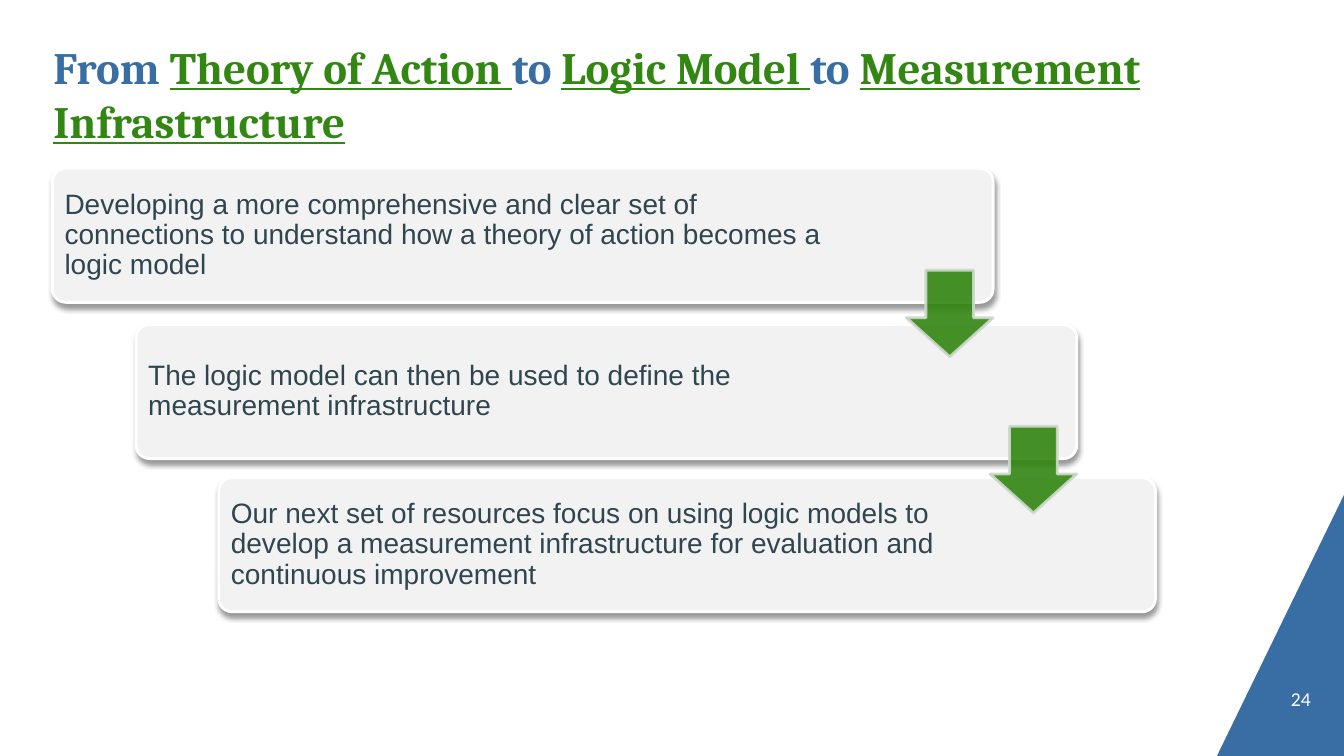
"""Build a slide of three stepped cards joined by down arrows."""
from dataclasses import dataclass
from typing import Any

from lxml.etree import SubElement
from pptx import Presentation
from pptx.dml.color import RGBColor as RGB
from pptx.enum.shapes import MSO_SHAPE as Kind
from pptx.enum.text import MSO_ANCHOR as Anchor, MSO_AUTO_SIZE as Fit, PP_ALIGN as Align
from pptx.oxml.ns import qn
from pptx.util import Inches, Pt


@dataclass(frozen=True)
class Theme:
    blue: str = "386EA3"
    green: str = "328612"
    ink: str = "2F4550"
    card: str = "F2F2F2"
    edge: str = "CED9CC"
    white: str = "FFFFFF"
    black: str = "000000"
    head: int = 32
    body: int = 20
    small: int = 14


@dataclass(frozen=True)
class Box:
    x: float
    y: float
    w: float
    h: float

    def place(self) -> list[int]:
        return [Inches(v) for v in (self.x, self.y, self.w, self.h)]


@dataclass(frozen=True)
class Card:
    box: Box
    wide: float
    text: str


THEME = Theme()
CARDS = [
    Card(Box(0.52, 1.67, 9.33, 1.33), 7.89,
         "Developing a more comprehensive and clear set of connections "
         "to understand how a theory of action becomes a logic model"),
    Card(Box(1.35, 3.22, 9.33, 1.33), 7.56,
         "The logic model can then be used to define the measurement infrastructure"),
    Card(Box(2.17, 4.74, 9.29, 1.33), 7.53,
         "Our next set of resources focus on using logic models to develop a "
         "measurement infrastructure for evaluation and continuous improvement"),
]
TITLE = [
    ("From ", False), ("Theory of Action ", True), ("to ", False),
    ("Logic Model ", True), ("to ", False), ("Measurement Infrastructure", True),
]


def apply(item: Any, form: dict[str, Any]) -> None:
    for name, value in form.items():
        setattr(item, name, value)


def style(font: Any, face: str, size: int, tint: str, **more: Any) -> None:
    apply(font, {"name": face, "size": Pt(size), **more})
    font.color.rgb = RGB.from_string(tint)


def frame(shape: Any, inset: float, anchor: Any) -> Any:
    pad = Inches(inset)
    apply(shape.text_frame, {
        "word_wrap": True, "auto_size": Fit.NONE, "vertical_anchor": anchor,
        "margin_left": pad, "margin_top": pad, "margin_right": pad, "margin_bottom": pad,
    })
    return shape.text_frame.paragraphs[0]


def paint(shape: Any, fill: str, line: str | None = None) -> None:
    shape.shadow.inherit = False
    shape.fill.solid()
    shape.fill.fore_color.rgb = RGB.from_string(fill)
    if line:
        shape.line.color.rgb = RGB.from_string(line)
        shape.line.width = Pt(2)
    else:
        shape.line.fill.background()


def fade(tint: Any, part: int) -> None:
    SubElement(tint, qn("a:alpha"), val=str(part * 1000))


def shade(shape: Any) -> None:
    glow = SubElement(shape.element.spPr.find(qn("a:effectLst")), qn("a:outerShdw"),
                      blurRad=str(Pt(4)), dist=str(Pt(3)), dir="5400000", rotWithShape="0")
    fade(SubElement(glow, qn("a:srgbClr"), val=THEME.black), 40)


def write(shapes: Any, box: Box, text: str, font: tuple[str, int, str],
          inset: float, anchor: Any, align: Any) -> None:
    para = frame(shapes.add_textbox(*box.place()), inset, anchor)
    apply(para, {"text": text, "alignment": align, "line_spacing": 0.9})
    style(para.font, *font)


def draw_title(title: Any) -> None:
    apply(title, dict(zip(("left", "top", "width", "height"),
                          Box(0.53, 0.66, 11.95, 0.54).place())))
    para = frame(title, 0, Anchor.MIDDLE)
    para.alignment = Align.LEFT
    for text, key in TITLE:
        run = para.add_run()
        run.text = text
        style(run.font, "Cambria", THEME.head, THEME.green if key else THEME.blue,
              bold=True, underline=key)


def draw_wedge(shapes: Any) -> None:
    path = shapes.build_freeform(Inches(13.33), Inches(4.91))
    path.add_line_segments([(Inches(12.07), Inches(7.5)), (Inches(13.33), Inches(7.5))])
    paint(path.convert_to_shape(), THEME.blue)


def draw_card(shapes: Any, card: Card) -> None:
    box = card.box
    plate = shapes.add_shape(Kind.ROUNDED_RECTANGLE, *box.place())
    plate.adjustments[0] = 0.1
    paint(plate, THEME.card, THEME.white)
    shade(plate)
    write(shapes, Box(box.x + 0.04, box.y + 0.04, card.wide, 1.25), card.text,
          ("Arial", THEME.body, THEME.ink), 0.08, Anchor.MIDDLE, Align.LEFT)


def draw_arrow(shapes: Any, box: Box) -> None:
    arrow = shapes.add_shape(Kind.DOWN_ARROW, *Box(box.x + 8.47, box.y + 1.01, 0.86, 0.86).place())
    arrow.adjustments[0], arrow.adjustments[1] = 0.55, 0.45
    paint(arrow, THEME.green, THEME.edge)
    for tint in arrow.element.spPr.iter(qn("a:srgbClr")):
        fade(tint, 90)


def main() -> None:
    deck = Presentation()
    apply(deck, {"slide_width": Inches(13.33), "slide_height": Inches(7.5)})
    shapes = deck.slides.add_slide(deck.slide_layouts[5]).shapes
    draw_wedge(shapes)
    draw_title(shapes.title)
    write(shapes, Box(12.01, 6.75, 0.99, 0.3), "24",
          ("Calibri", THEME.small, THEME.white), 0, Anchor.BOTTOM, Align.RIGHT)
    for card in CARDS:
        draw_card(shapes, card)
    for card in CARDS[:-1]:
        draw_arrow(shapes, card.box)
    deck.save("out.pptx")


if __name__ == "__main__":
    main()
